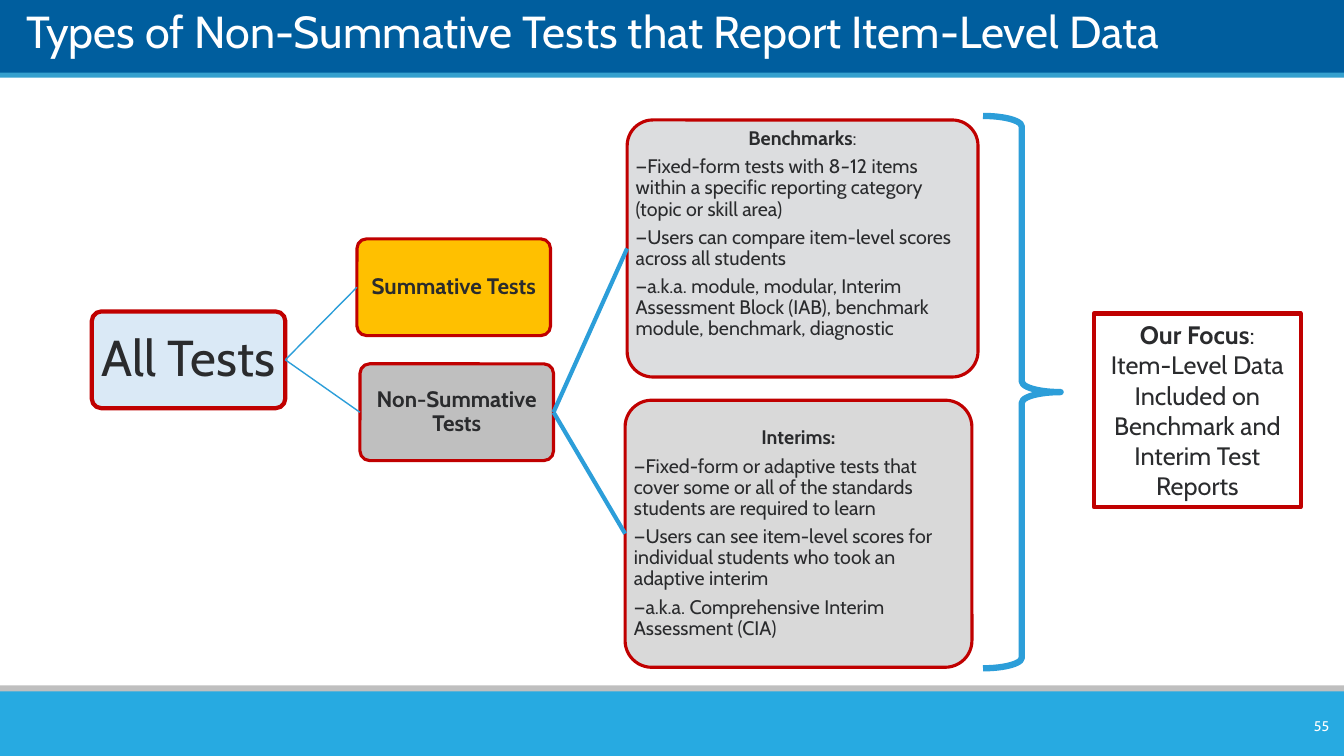
from dataclasses import dataclass

from lxml import etree
from pptx import Presentation
from pptx import util as u
from pptx.dml.color import RGBColor
from pptx.enum import shapes, text
from pptx.oxml.ns import qn

SCALE = 9144
LEFT_SITE, RIGHT_SITE = 1, 3
Runs = tuple[tuple[str, str], ...]


@dataclass(frozen=True)
class Theme:
    """Colours, font and type sizes of the slide."""
    font: str = "Cabin"
    ink: str = "2A2B2D"
    white: str = "FFFFFF"
    header: str = "005E9E"
    header_edge: str = "35A0CE"
    footer: str = "27AAE1"
    footer_edge: str = "BFBFBF"
    outline: str = "C00000"
    link: str = "2C9ED9"
    root: str = "DAE9F6"
    summative: str = "FFC000"
    non_summative: str = "BFBFBF"
    benchmarks: str = "DCDDDF"
    interims: str = "D9D9D9"
    title_size: int = 32
    root_size: int = 36
    branch_size: int = 16
    detail_size: int = 14
    focus_size: int = 18
    page_size: int = 10


THEME = Theme()


@dataclass(frozen=True)
class Area:
    """A rectangle in px."""
    left: int
    top: int
    width: int
    height: int

    def emu(self) -> tuple[int, ...]:
        """Return the four lengths in EMU."""
        return tuple(n * SCALE for n in (self.left, self.top, self.width, self.height))


@dataclass(frozen=True)
class Line:
    """One paragraph: runs of (style, wording), with b and i as styles."""
    runs: Runs
    centred: bool = False


@dataclass(frozen=True)
class Node:
    """One rounded box of the tree."""
    name: str
    area: Area
    fill: str
    size: int
    lines: tuple[Line, ...]
    outline: float = 2.25
    inset: int = 1
    bottom_inset: int = 1


@dataclass(frozen=True)
class Link:
    """A line from one node to another."""
    start: str
    end: str
    weight: float


BARS = (
    (Area(0, 0, 1333, 74), THEME.header),
    (Area(0, 72, 1333, 5), THEME.header_edge),
    (Area(0, 680, 1333, 14), THEME.footer_edge),
    (Area(0, 686, 1333, 64), THEME.footer),
)
NODES = (
    Node("all", Area(91, 309, 192, 96), THEME.root, THEME.root_size,
         (Line((("", "All Tests"),), True),), 3, 3, 3),
    Node("summative", Area(354, 237, 192, 96), THEME.summative, THEME.branch_size,
         (Line((("b", "Summative Tests"),), True),)),
    Node("non-summative", Area(357, 361, 192, 96), THEME.non_summative, THEME.branch_size,
         (Line((("b", "Non-Summative Tests"),), True),)),
    Node("benchmarks", Area(622, 119, 348, 255), THEME.benchmarks, THEME.detail_size, (
        Line((("b", "Benchmarks"), ("", ":")), True),
        Line((("", "—Fixed-form tests with 8"), ("i", "–"),
              ("", "12 items within a specific reporting category (topic or skill area)"))),
        Line((("", "—Users can compare item-level scores across all students"),)),
        Line((("", "—a.k.a. module, modular, Interim Assessment Block (IAB), "
                   "benchmark module, benchmark, diagnostic"),)),
    ), bottom_inset=29),
    Node("interims", Area(620, 397, 344, 265), THEME.interims, THEME.detail_size, (
        Line((("b", "Interims:"),), True),
        Line((("", "—Fixed-form or adaptive tests that cover some or all of the "
                   "standards students are required to learn"),)),
        Line((("", "—Users can see item-level scores for individual students "
                   "who took an adaptive interim"),)),
        Line((("", "—a.k.a. Comprehensive Interim Assessment (CIA)"),)),
    )),
)
LINKS = (
    Link("all", "summative", 1),
    Link("all", "non-summative", 1),
    Link("non-summative", "benchmarks", 3),
    Link("non-summative", "interims", 3),
)
FOCUS = (
    Line((("b", "Our Focus"), ("", ":")), True),
    Line((("", "Item-Level Data Included on Benchmark and Interim Test Reports"),), True),
)


def add_form(slide, kind, area: Area, fill: str = "", line: str = "", weight: float = 0):
    """Draw a preset shape without shadow."""
    shape = slide.shapes.add_shape(kind, *area.emu())
    shape.shadow.inherit = False
    if fill:
        shape.fill.solid()
        shape.fill.fore_color.rgb = RGBColor.from_string(fill)
    else:
        shape.fill.background()
    if line:
        shape.line.color.rgb = RGBColor.from_string(line)
        shape.line.width = u.Pt(weight)
    else:
        shape.line.fill.background()
    return shape


def set_insets(frame, left: int, top: int, right: int, bottom: int) -> None:
    """Set the text margins in px."""
    frame.margin_left, frame.margin_top = left * SCALE, top * SCALE
    frame.margin_right, frame.margin_bottom = right * SCALE, bottom * SCALE


def write(frame, lines: tuple[Line, ...], size: int, spacing: float = 1, after: float = 0) -> None:
    """Fill a text frame with styled paragraphs."""
    frame.word_wrap = True
    frame.vertical_anchor = text.MSO_ANCHOR.MIDDLE
    for index, line in enumerate(lines):
        paragraph = frame.add_paragraph() if index else frame.paragraphs[0]
        paragraph.alignment = text.PP_ALIGN.CENTER if line.centred else text.PP_ALIGN.LEFT
        paragraph.line_spacing = spacing
        paragraph.space_after = u.Pt(after)
        paragraph.font.name = THEME.font
        paragraph.font.size = u.Pt(size)
        paragraph.font.color.rgb = RGBColor.from_string(THEME.ink)
        for style, wording in line.runs:
            run = paragraph.add_run()
            run.text = wording
            if style == "b":
                run.font.bold = True
            elif style == "i":
                run.font.italic = True


def add_node(slide, node: Node):
    """Draw a rounded box with its text."""
    shape = add_form(slide, shapes.MSO_SHAPE.ROUNDED_RECTANGLE, node.area,
                     node.fill, THEME.outline, node.outline)
    shape.adjustments[0] = 0.1
    set_insets(shape.text_frame, node.inset, node.inset, node.inset, node.bottom_inset)
    write(shape.text_frame, node.lines, node.size, 0.9, 5)
    return shape


def add_link(slide, start, end, weight: float) -> None:
    """Join the right side of one box to the left side of another."""
    connector = slide.shapes.add_connector(shapes.MSO_CONNECTOR.STRAIGHT, 0, 0, 0, 0)
    connector.begin_connect(start, RIGHT_SITE)
    connector.end_connect(end, LEFT_SITE)
    connector.line.color.rgb = RGBColor.from_string(THEME.link)
    connector.line.width = u.Pt(weight)
    etree.SubElement(connector._element.spPr, qn("a:effectLst"))


def add_label(slide, area: Area, wording: str, size: int, alignment, anchor):
    """Add a white line of text."""
    frame = slide.shapes.add_textbox(*area.emu()).text_frame
    write(frame, (Line((("", wording),)),), size)
    frame.vertical_anchor = anchor
    frame.paragraphs[0].alignment = alignment
    frame.paragraphs[0].font.color.rgb = RGBColor.from_string(THEME.white)
    return frame


def main() -> None:
    """Build the slide and save it."""
    presentation = Presentation()
    presentation.slide_width, presentation.slide_height = 1333 * SCALE, 750 * SCALE
    slide = presentation.slides.add_slide(presentation.slide_layouts[6])
    for area, colour in BARS:
        add_form(slide, shapes.MSO_SHAPE.RECTANGLE, area, colour)
    title = add_label(slide, Area(26, 0, 1205, 57),
                      "Types of Non-Summative Tests that Report Item-Level Data",
                      THEME.title_size, text.PP_ALIGN.LEFT, text.MSO_ANCHOR.BOTTOM)
    set_insets(title, 0, 0, 0, 0)
    boxes = {node.name: add_node(slide, node) for node in NODES}
    for link in LINKS:
        add_link(slide, boxes[link.start], boxes[link.end], link.weight)
    brace = add_form(slide, shapes.MSO_SHAPE.RIGHT_BRACE, Area(975, 115, 77, 548),
                     line=THEME.link, weight=4.5)
    brace.adjustments[0] = 0.137
    focus = add_form(slide, shapes.MSO_SHAPE.RECTANGLE, Area(1085, 311, 205, 192),
                     line=THEME.outline, weight=3)
    write(focus.text_frame, FOCUS, THEME.focus_size)
    add_label(slide, Area(1251, 705, 77, 30), "55", THEME.page_size,
              text.PP_ALIGN.RIGHT, text.MSO_ANCHOR.MIDDLE)
    presentation.save("out.pptx")


if __name__ == "__main__":
    main()
